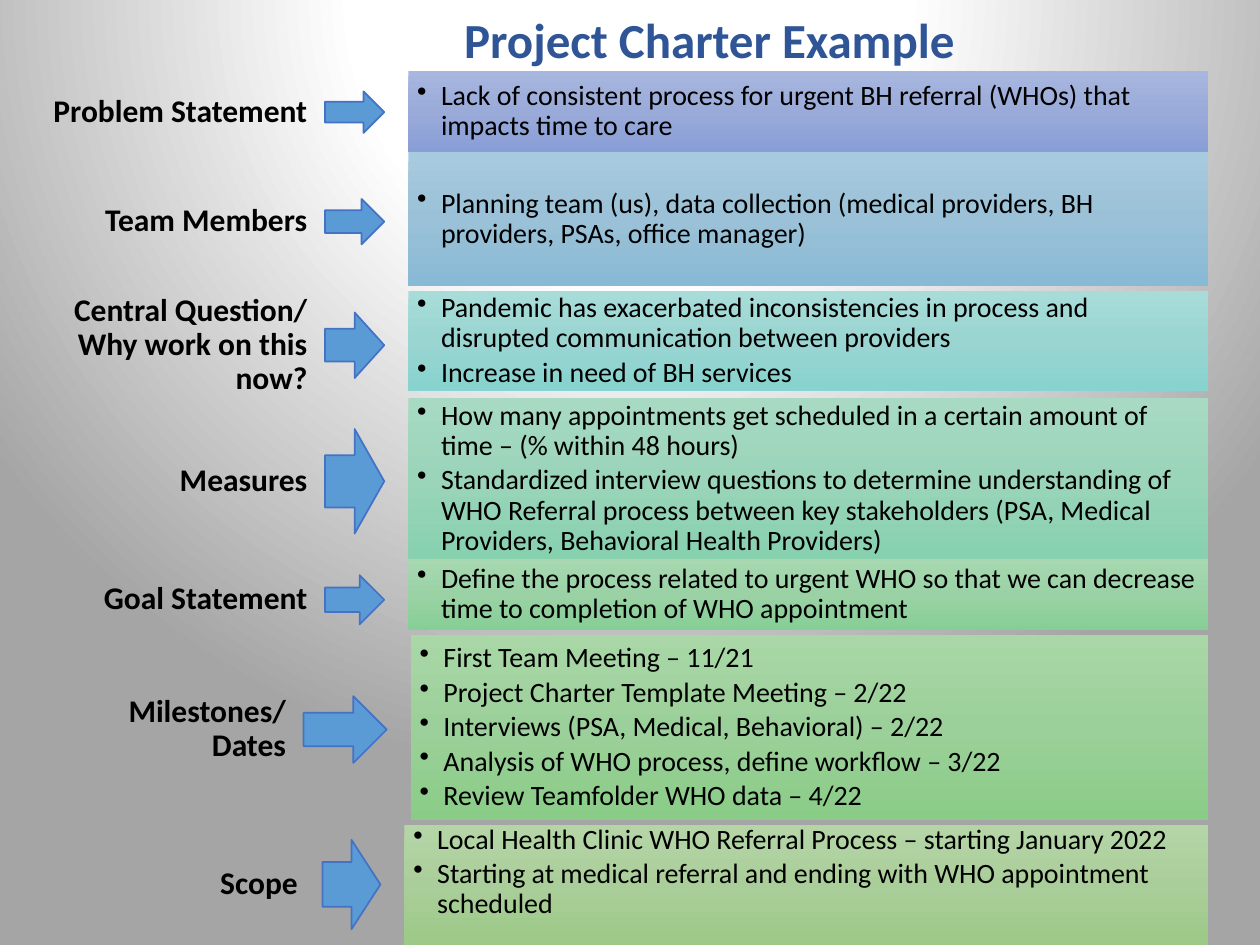
from dataclasses import dataclass

from pptx import Presentation
from pptx.dml.color import RGBColor
from pptx.enum.shapes import MSO_SHAPE
from pptx.enum.text import MSO_ANCHOR, PP_ALIGN
from pptx.oxml import parse_xml
from pptx.oxml.ns import nsdecls, qn
from pptx.slide import Slide
from pptx.text.text import TextFrame, _Paragraph
from pptx.util import Inches, Pt

ARROW = MSO_SHAPE.RIGHT_ARROW
RECTANGLE = MSO_SHAPE.RECTANGLE
MIDDLE = MSO_ANCHOR.MIDDLE
CENTER, LEFT, RIGHT = PP_ALIGN.CENTER, PP_ALIGN.LEFT, PP_ALIGN.RIGHT

FONT = "Calibri"
LABEL_LEFT = 0.25
PANEL_RIGHT = 9.59
BULLET_INDENT = 0.19
DOWNWARD = '<a:lin ang="5400000" scaled="0"/>'
FROM_ABOVE = (
    '<a:path path="circle">'
    '<a:fillToRect l="50000" t="-80000" r="50000" b="180000"/></a:path>'
)


@dataclass(frozen=True)
class Section:
    label: str
    middle: float
    arrow_height: float
    panel_top: float
    panel_height: float
    shades: tuple[str, str, str]
    points: tuple[str, ...]
    label_height: float = 0.34
    arrow_left: float = 2.58
    arrow_width: float = 0.47
    panel_left: float = 3.24
    bottom_inset: float = 0.07


SECTIONS = (
    Section("Problem Statement", 0.89, 0.33, 0.56, 0.65,
            ("A8B7DF", "9AABD9", "889ED7"),
            ("Lack of consistent process for urgent BH referral (WHOs) that impacts time to care",)),
    Section("Team Members", 1.76, 0.36, 1.21, 1.06,
            ("A8CADE", "9AC1D7", "88B9D5"),
            ("Planning team (us), data collection (medical providers, BH providers, PSAs, "
             "office manager)",)),
    Section("Central Question/ Why work on this now?", 2.74, 0.52, 2.31, 0.79,
            ("A8DCD9", "9AD5D2", "87D3CF"),
            ("Pandemic has exacerbated inconsistencies in process and disrupted "
             "communication between providers",
             "Increase in need of BH services"),
            label_height=0.85),
    Section("Measures", 3.82, 0.83, 3.16, 1.28,
            ("A8DAC3", "9AD4B9", "87D1AF"),
            ("How many appointments get scheduled in a certain amount of time – "
             "(% within 48 hours)",
             "Standardized interview questions to determine understanding of WHO Referral "
             "process between key stakeholders (PSA, Medical Providers, Behavioral Health "
             "Providers)")),
    Section("Goal Statement", 4.76, 0.39, 4.44, 0.56,
            ("A7D8B1", "9AD2A5", "87CE96"),
            ("Define the process related to urgent WHO so that we can decrease time to "
             "completion of WHO appointment",)),
    Section("Milestones/ Dates", 5.79, 0.53, 5.04, 1.47,
            ("A9D7A7", "9CD09A", "8ACC87"),
            ("First Team Meeting – 11/21",
             "Project Charter Template Meeting – 2/22",
             "Interviews (PSA, Medical, Behavioral) – 2/22",
             "Analysis of WHO process, define workflow – 3/22",
             "Review Teamfolder WHO data – 4/22"),
            label_height=0.58, arrow_left=2.41, arrow_width=0.66, panel_left=3.26),
    Section("Scope ", 7.02, 0.71, 6.55, 0.95,
            ("B5D5A7", "AACE9A", "9CC987"),
            ("Local Health Clinic WHO Referral Process – starting January 2022",
             "Starting at medical referral and ending with WHO appointment scheduled"),
            arrow_left=2.56, arrow_width=0.46, panel_left=3.21, bottom_inset=0.27),
)


def color(value: str) -> RGBColor:
    return RGBColor.from_string(value)


def gradient(stops: tuple[tuple[int, str], ...], direction: str) -> str:
    marks = "".join(
        f'<a:gs pos="{percent * 1000}"><a:srgbClr val="{color(shade)}"/></a:gs>'
        for percent, shade in stops
    )
    return (f'<a:gradFill {nsdecls("a")} rotWithShape="1">'
            f"<a:gsLst>{marks}</a:gsLst>{direction}</a:gradFill>")


def paint_background(slide: Slide) -> None:
    fill = gradient(((0, "FFFFFF"), (35, "FFFFFF"), (100, "A5A5A5")), FROM_ABOVE)
    background = parse_xml(
        f'<p:bg {nsdecls("p", "a")}><p:bgPr>{fill}<a:effectLst/></p:bgPr></p:bg>'
    )
    slide._element.cSld.insert(0, background)


def set_frame(frame: TextFrame, side: float, top: float, bottom: float) -> None:
    frame.word_wrap = True
    frame.vertical_anchor = MIDDLE
    frame.margin_left = frame.margin_right = Inches(side)
    frame.margin_top, frame.margin_bottom = Inches(top), Inches(bottom)


def style(paragraph: _Paragraph, size: int, align: PP_ALIGN,
          shade: str = "000000", bold: bool = False) -> None:
    paragraph.alignment = align
    paragraph.font.name = FONT
    paragraph.font.size = Pt(size)
    paragraph.font.bold = bold
    paragraph.font.color.rgb = color(shade)


def add_bullet(paragraph: _Paragraph) -> None:
    properties = paragraph._p.get_or_add_pPr()
    properties.set("marL", str(Inches(BULLET_INDENT)))
    properties.set("indent", str(-Inches(BULLET_INDENT)))
    properties.append(parse_xml(f'<a:buChar {nsdecls("a")} char="•"/>'))


def draw_title(slide: Slide) -> None:
    title = slide.shapes.add_textbox(Inches(3.26), Inches(0.03), Inches(4.74), Inches(0.57))
    title.text_frame.word_wrap = True
    heading = title.text_frame.paragraphs[0]
    heading.text = "Project Charter Example"
    style(heading, 28, CENTER, "2F5597", bold=True)


def draw_label(slide: Slide, section: Section) -> None:
    label = slide.shapes.add_textbox(
        Inches(LABEL_LEFT), Inches(section.middle - section.label_height / 2),
        Inches(section.arrow_left - LABEL_LEFT), Inches(section.label_height))
    set_frame(label.text_frame, 0.14, 0.05, 0.05)
    name = label.text_frame.paragraphs[0]
    name.text = section.label
    name.line_spacing = 0.9
    name.space_after = Pt(6.3)
    style(name, 18, RIGHT, bold=True)


def draw_arrow(slide: Slide, section: Section) -> None:
    arrow = slide.shapes.add_shape(
        ARROW, Inches(section.arrow_left), Inches(section.middle - section.arrow_height / 2),
        Inches(section.arrow_width), Inches(section.arrow_height))
    arrow.shadow.inherit = False
    arrow.fill.solid()
    arrow.fill.fore_color.rgb = color("5B9BD5")
    arrow.line.color.rgb = color("4472C4")
    arrow.line.width = Pt(1)


def draw_panel(slide: Slide, section: Section) -> None:
    panel = slide.shapes.add_shape(
        RECTANGLE, Inches(section.panel_left), Inches(section.panel_top),
        Inches(PANEL_RIGHT - section.panel_left), Inches(section.panel_height))
    panel.shadow.inherit = False
    panel.line.fill.background()
    panel.fill.background()
    properties = panel._element.spPr
    stops = tuple(zip((0, 50, 100), section.shades))
    properties.replace(properties.find(qn("a:noFill")), parse_xml(gradient(stops, DOWNWARD)))

    frame = panel.text_frame
    set_frame(frame, 0.07, 0.07, section.bottom_inset)
    for index, point in enumerate(section.points):
        item = frame.add_paragraph() if index else frame.paragraphs[0]
        item.text = point
        item.level = 1
        item.line_spacing = 0.9
        item.space_after = Pt(2.4)
        add_bullet(item)
        style(item, 16, LEFT)


def main() -> None:
    presentation = Presentation()
    presentation.slide_width, presentation.slide_height = Inches(10), Inches(7.5)
    slide = presentation.slides.add_slide(presentation.slide_layouts[6])
    paint_background(slide)
    for section in SECTIONS:
        draw_label(slide, section)
        draw_arrow(slide, section)
        draw_panel(slide, section)
    draw_title(slide)
    presentation.save("out.pptx")


if __name__ == "__main__":
    main()
